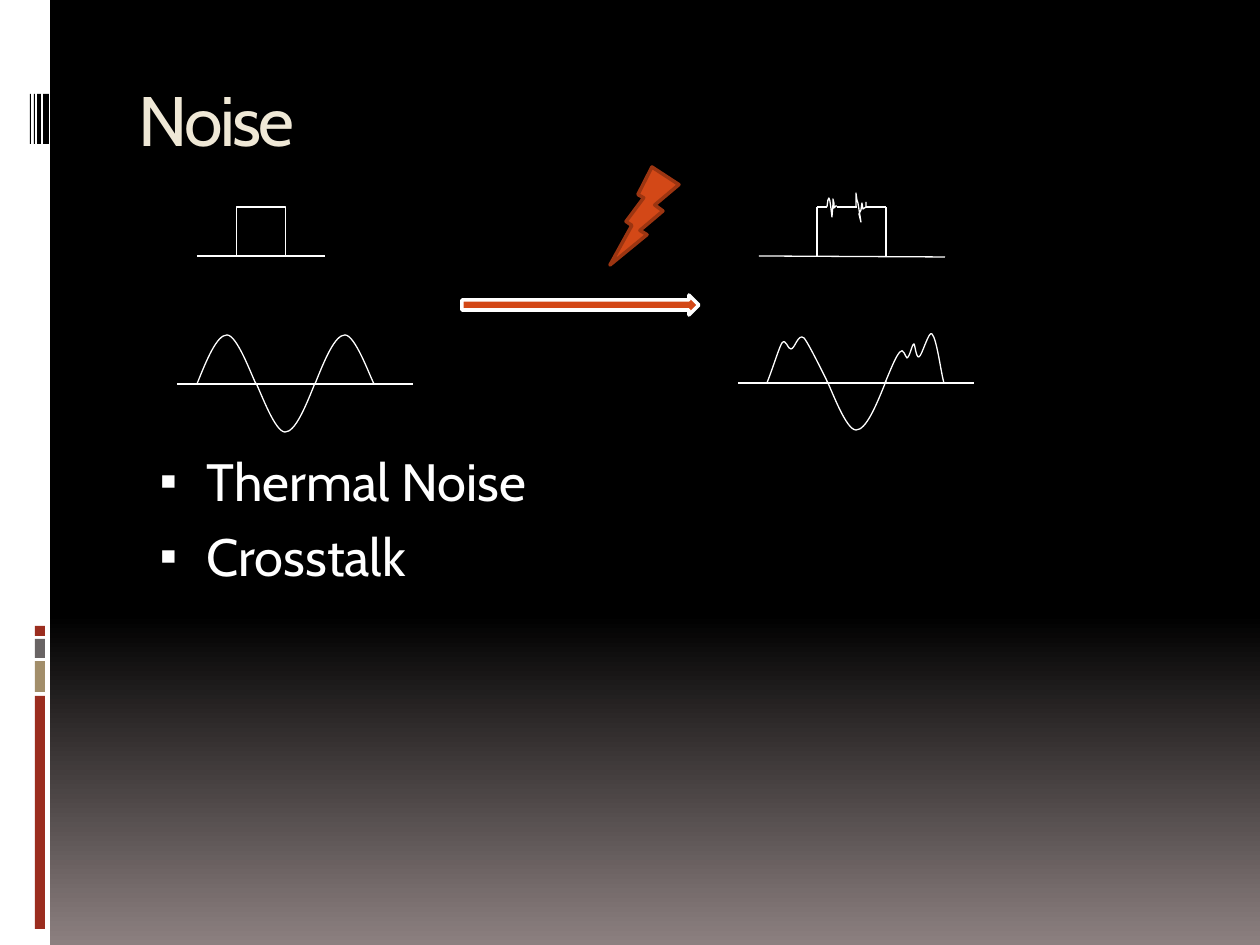
from dataclasses import dataclass

from lxml.etree import SubElement
from pptx import Presentation
from pptx.dml.color import RGBColor
from pptx.enum.shapes import MSO_CONNECTOR, MSO_SHAPE
from pptx.enum.text import MSO_ANCHOR, MSO_AUTO_SIZE, PP_ALIGN
from pptx.oxml.ns import qn
from pptx.util import Emu, Pt

PX = 914400 / 126
WHITE, BLACK, RUST, ORANGE = "FFFFFF", "000000", "9B2D1F", "D34817"


@dataclass
class Bar:
    x: int
    y: int
    w: int
    h: int
    color: str


@dataclass
class Line:
    x1: int
    y1: int
    x2: int
    y2: int
    kind: MSO_CONNECTOR = MSO_CONNECTOR.STRAIGHT


@dataclass
class Trace:
    points: list
    curved: bool = True  # start point, then three points per Bézier segment
    rotation: int = 0


@dataclass
class Signal:
    traces: list
    lines: list


def px(n: int) -> Emu:
    return Emu(round(n * PX))


def rgb(color: str) -> RGBColor:
    return RGBColor.from_string(color)


def half_wave(x: int, y: int, rotation: int = 0) -> Trace:
    """A crest whose foot starts at (x, y); turned by 180 it becomes a trough."""
    hump = [(0, 0), (10, -25), (20, -49), (30, -49), (40, -49), (54, -10), (59, 0)]
    return Trace([(x + dx, y + dy) for dx, dy in hump], rotation=rotation)


def draw_shape(shapes, kind: MSO_SHAPE, bar: Bar, line: str = "", width: float = 0):
    s = shapes.add_shape(kind, px(bar.x), px(bar.y), px(bar.w), px(bar.h))
    s.shadow.inherit = False
    s.fill.solid()
    s.fill.fore_color.rgb = rgb(bar.color)
    if line:
        s.line.color.rgb = rgb(line)
        s.line.width = Pt(width)
    else:
        s.line.fill.background()
    return s


def bend(s) -> None:
    """Join every three straight segments into one cubic Bézier segment."""
    path = next(s._element.iter(qn("a:path")))
    segments = path.findall(qn("a:lnTo"))
    for i in range(0, len(segments), 3):
        curve = SubElement(path, qn("a:cubicBezTo"))
        for segment in segments[i:i + 3]:
            curve.append(segment[0])
            path.remove(segment)


def draw_trace(shapes, trace: Trace) -> None:
    pts = [(px(x), px(y)) for x, y in trace.points]
    fb = shapes.build_freeform(*pts[0], scale=1.0)
    fb.add_line_segments(pts[1:], close=False)
    s = fb.convert_to_shape()
    if trace.curved:
        bend(s)
    s.rotation = trace.rotation
    s.shadow.inherit = False
    s.fill.background()
    s.line.color.rgb = rgb(WHITE)
    s.line.width = Pt(0.75)


def draw_line(shapes, line: Line) -> None:
    c = shapes.add_connector(line.kind, px(line.x1), px(line.y1), px(line.x2), px(line.y2))
    c.line.color.rgb = rgb(WHITE)
    c.line.width = Pt(0.75)
    SubElement(c._element.spPr, qn("a:effectLst"))


def draw_signal(shapes, signal: Signal) -> None:
    group = shapes.add_group_shape().shapes
    for trace in signal.traces:
        draw_trace(group, trace)
    for line in signal.lines:
        draw_line(group, line)


def place(sp, x: int, y: int, w: int, h: int):
    sp.left, sp.top, sp.width, sp.height = px(x), px(y), px(w), px(h)
    tf = sp.text_frame
    settings = {"word_wrap": True, "auto_size": MSO_AUTO_SIZE.NONE,
                "vertical_anchor": MSO_ANCHOR.TOP}
    for name, value in settings.items():
        setattr(tf, name, value)
    return tf


def write(p, text: str, size: int, color: str):
    r = p.add_run()
    r.text = text
    for name, value in {"name": "Cabin", "size": Pt(size)}.items():
        setattr(r.font, name, value)
    r.font.color.rgb = rgb(color)
    p.alignment = PP_ALIGN.LEFT
    return r


def add_bullet(p) -> None:
    pPr = p._p.get_or_add_pPr()
    pPr.set("marL", str(px(57)))
    pPr.set("indent", str(-px(47)))
    for tag, name, value in (("a:buSzPct", "val", "95000"),
                             ("a:buFont", "typeface", "Arial"),
                             ("a:buChar", "char", "▪")):
        SubElement(pPr, qn(tag)).set(name, value)


SIDE_BARS = [
    Bar(0, 0, 50, 945, WHITE),
    Bar(35, 696, 10, 233, RUST), Bar(35, 661, 10, 31, "A28E6A"),
    Bar(35, 639, 10, 19, "696464"), Bar(35, 626, 10, 10, RUST),
    Bar(43, 94, 6, 50, BLACK), Bar(37, 94, 4, 50, BLACK),
    Bar(34, 94, 1, 50, BLACK), Bar(30, 94, 1, 50, BLACK),
]

SPIKES = [
    [(827, 207), (828, 200), (829, 198), (830, 201), (831, 208), (832, 217),
     (833, 205), (833, 199), (834, 203), (834, 208), (836, 206), (837, 206)],
    [(856, 207), (856, 193), (857, 200), (858, 203), (859, 209), (861, 222),
     (859, 214), (861, 210), (862, 203), (863, 209), (866, 207), (866, 202)],
]
NOISY_CRESTS = [
    [(767, 383), (774, 365), (779, 348), (782, 343), (786, 338), (788, 350), (791, 349),
     (795, 349), (798, 333), (804, 338), (809, 344), (824, 375), (828, 383)],
    [(885, 383), (891, 369), (896, 356), (900, 352), (903, 347), (906, 358), (907, 358),
     (910, 357), (912, 344), (914, 344), (915, 344), (916, 358), (919, 357),
     (922, 356), (929, 330), (932, 334), (937, 339), (941, 373), (944, 383)],
]

noisy_pulse = Signal(
    [Trace(spike, curved=False) for spike in SPIKES],
    [Line(759, 256, 945, 257)]
    + [Line(x, 256, x, 207) for x in (817, 886)]
    + [Line(a, 207, b, 207) for a, b in ((817, 827), (837, 857), (867, 886), (866, 867))])
clean_wave = Signal(
    [half_wave(197, 384), half_wave(256, 432, 180), half_wave(315, 384)],
    [Line(177, 384, 413, 384)])
noisy_wave = Signal(
    [half_wave(827, 430, 180)] + [Trace(crest) for crest in NOISY_CRESTS],
    [Line(738, 383, 974, 383)])
clean_pulse = Signal([], [
    Line(197, 256, 276, 207, MSO_CONNECTOR.ELBOW),
    Line(325, 256, 246, 207, MSO_CONNECTOR.ELBOW),
    Line(227, 256, 305, 256)])


def main() -> None:
    prs = Presentation()
    prs.slide_width, prs.slide_height = px(1260), px(945)
    slide = prs.slides.add_slide(prs.slide_layouts[1])
    shapes = slide.shapes

    # Background: black fading to warm grey at the bottom
    fill = slide.background.fill
    fill.gradient()
    fill.gradient_angle = 270
    for stop, (pos, color) in zip(fill.gradient_stops, ((0.65, BLACK), (1, "8C8080"))):
        stop.position = pos
        stop.color.rgb = rgb(color)

    # Side strip
    for bar in SIDE_BARS:
        draw_shape(shapes, MSO_SHAPE.RECTANGLE, bar)

    # Title and list
    tf = place(shapes.title, 126, 70, 1071, 126)
    r = write(tf.paragraphs[0], "Noise", 40, "EFE8D6")
    r.font._element.set("spc", "-150")
    tf = place(slide.placeholders[1], 137, 443, 1071, 462)
    for i, text in enumerate(("Thermal Noise", "Crosstalk")):
        p = tf.add_paragraph() if i else tf.paragraphs[0]
        write(p, text, 30, WHITE)
        p.space_before = Pt(6.5)
        add_bullet(p)

    # Signals before and after the disturbance
    for signal in (noisy_pulse, clean_wave, noisy_wave):
        draw_signal(shapes, signal)
    draw_shape(shapes, MSO_SHAPE.RIGHT_ARROW, Bar(462, 295, 237, 20, ORANGE), WHITE, 2)
    bolt = draw_shape(shapes, MSO_SHAPE.LIGHTNING_BOLT, Bar(610, 167, 69, 98, ORANGE), "9C3511", 2)
    bolt._element.spPr.xfrm.set("flipH", "1")
    draw_signal(shapes, clean_pulse)

    prs.save("out.pptx")


if __name__ == "__main__":
    main()
